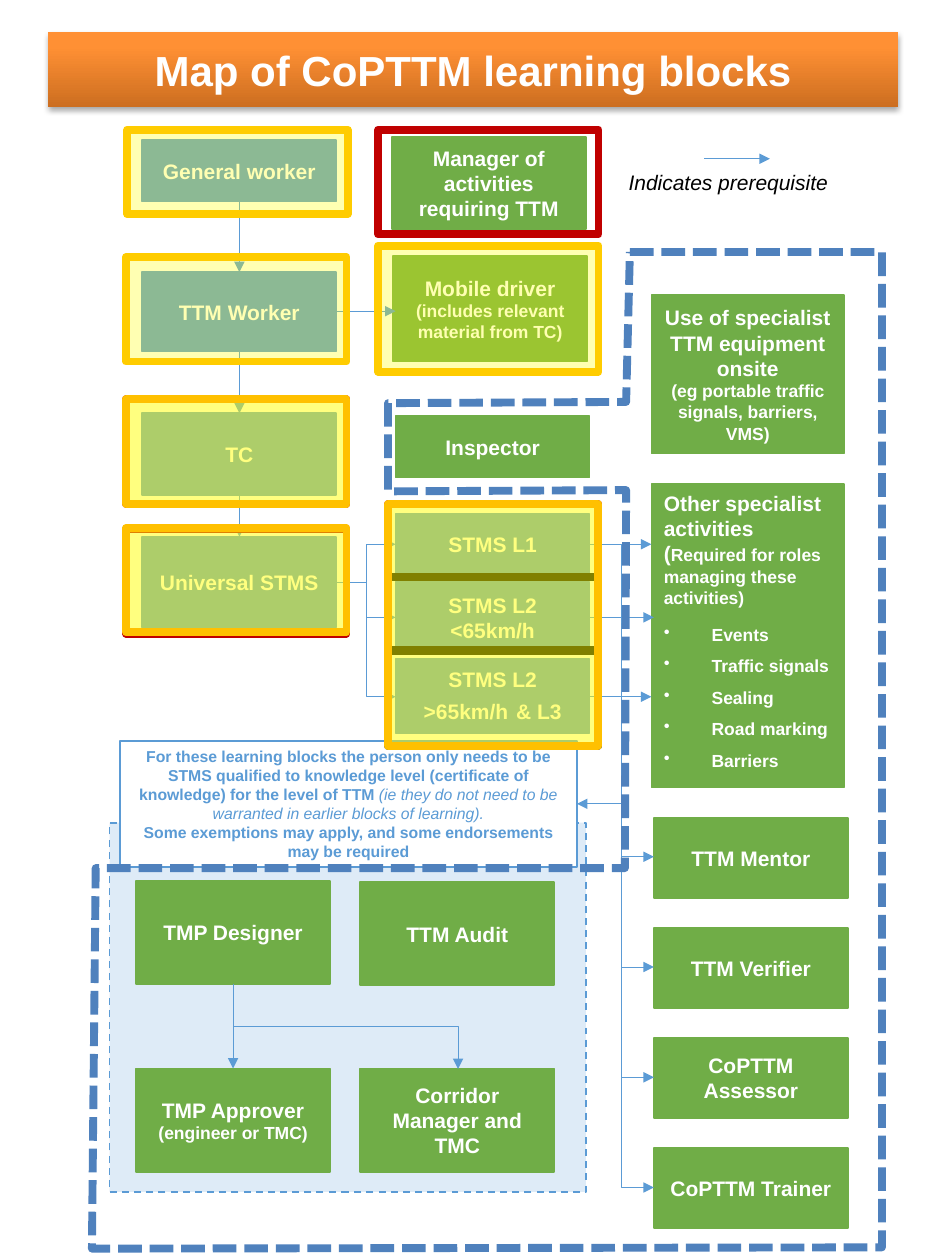
import pptx
import pptx.util
import pptx.oxml
import pptx.oxml.ns
import pptx.dml.color
import pptx.enum.dml
import pptx.enum.shapes
import pptx.enum.text
import lxml.etree

Inches, Pt = pptx.util.Inches, pptx.util.Pt
RGB = pptx.dml.color.RGBColor
KIND = pptx.enum.shapes.MSO_SHAPE
LINK = pptx.enum.shapes.MSO_CONNECTOR
DASH = pptx.enum.dml.MSO_LINE
ALIGN = pptx.enum.text.PP_ALIGN
ANCHOR = pptx.enum.text.MSO_ANCHOR
qn = pptx.oxml.ns.qn

BLUE, GREEN = RGB(0x5B, 0x9B, 0xD5), RGB(0x70, 0xAD, 0x47)
PALE, WHITE, BLACK = RGB(0xDE, 0xEB, 0xF7), RGB(255, 255, 255), RGB(0, 0, 0)
RED, YELLOW = RGB(0xC0, 0, 0), RGB(0xFF, 0xFF, 0)
GOLD, AMBER = RGB(0xFF, 0xCC, 0), RGB(0xFF, 0xC0, 0)
NAVY = RGB(0x4F, 0x81, 0xBD)

deck = pptx.Presentation()
deck.slide_width, deck.slide_height = Inches(7.5), Inches(10)
slide = deck.slides.add_slide(deck.slide_layouts[5])
shapes = slide.shapes


def add_box(at, fill, line, width=1):
    box = shapes.add_shape(KIND.RECTANGLE, *[Inches(v) for v in at])
    box.shadow.inherit = False
    if fill is None:
        box.fill.background()
    else:
        box.fill.solid()
        box.fill.fore_color.rgb = fill
    box.line.color.rgb = line
    box.line.width = Pt(width)
    return box


def set_text(para, text, size=12, color=WHITE, bold=True, align=ALIGN.CENTER, gap=6):
    """Write text in one font; lines are split at newlines."""
    para.alignment = align
    para.space_before = para.space_after = Pt(gap)
    font = para.font
    font.name, font.size, font.bold = "Arial", Pt(size), bold
    font.color.rgb = color
    for i, part in enumerate(text.split("\n")):
        if i:
            para.add_line_break()
        if part:
            para.add_run().text = part


# Panel behind the planning blocks
panel = add_box((0.87, 6.53, 3.78, 2.93), PALE, BLUE)
panel.line.dash_style = DASH.DASH

# Note on qualification level
note = add_box((0.95, 5.88, 3.63, 1), WHITE, BLUE)
note.text_frame.vertical_anchor = ANCHOR.MIDDLE
para = note.text_frame.paragraphs[0]
set_text(para, "For these learning blocks the person only needs to be STMS qualified "
         "to knowledge level (certificate of knowledge) for the level of TTM ", 9, BLUE, gap=3)
run = para.add_run()
run.text = "(ie they do not need to be warranted in earlier blocks of learning)."
run.font.bold, run.font.italic = False, True
para.add_line_break()
para.add_run().text = "Some exemptions may apply, and some endorsements may be required"

# Learning blocks: left, top, width, height, fill, heading, smaller text
W = 1.54
blocks = [
    (1.13, 1.11, W, 0.49, BLUE, "General worker", ""),
    (1.13, 2.16, W, 0.63, BLUE, "TTM Worker", ""),
    (1.13, 3.28, W, 0.65, BLUE, "TC", ""),
    (1.13, 4.26, W, 0.72, BLUE, "Universal STMS", ""),
    (3.14, 4.08, W, 0.47, BLUE, "STMS L1", ""),
    (3.14, 4.62, W, 0.56, BLUE, "STMS L2 <65km/h", ""),
    (3.11, 1.09, W, 0.73, GREEN, "Manager of activities requiring TTM", ""),
    (3.12, 2.03, W, 0.84, GREEN, "Mobile driver ", "(includes relevant material from TC)"),
    (3.14, 3.30, W, 0.49, GREEN, "Inspector", ""),
    (5.17, 2.34, 1.53, 1.26, GREEN, "Use of specialist TTM equipment onsite\n",
     "(eg portable traffic signals, barriers, VMS)"),
    (1.08, 6.99, W, 0.82, GREEN, "TMP Designer", ""),
    (2.86, 7.00, W, 0.82, GREEN, "TTM Audit", ""),
    (1.08, 8.48, W, 0.82, GREEN, "TMP Approver\n", "(engineer or TMC)"),
    (2.86, 8.48, W, 0.82, GREEN, "Corridor Manager and TMC", ""),
]
roles = ["TTM Mentor", "TTM Verifier", "CoPTTM Assessor", "CoPTTM Trainer"]
for i, role in enumerate(roles):
    blocks.append((5.19, 6.49 + 0.873 * i, W, 0.64, GREEN, role, ""))
for *at, fill, head, small in blocks:
    box = add_box(at, fill, fill)
    box.text_frame.vertical_anchor = ANCHOR.MIDDLE
    para = box.text_frame.paragraphs[0]
    set_text(para, head)
    if small:
        run = para.add_run()
        run.text, run.font.size = small, Pt(10)
    if head.startswith("Manager"):
        para.space_before = Pt(0)

# Highest STMS level, with a wide space before its last word
box = add_box((3.14, 5.23, W, 0.59), BLUE, BLUE)
box.text_frame.vertical_anchor = ANCHOR.MIDDLE
para = box.text_frame.paragraphs[0]
set_text(para, "STMS L2 >65km/h")
for text, size in ((" ", 16), ("& L3", 12)):
    run = para.add_run()
    run.text, run.font.size = text, Pt(size)

# Other specialist activities
box = add_box((5.17, 3.84, 1.53, 2.41), GREEN, GREEN)
frame = box.text_frame
frame.vertical_anchor = ANCHOR.TOP
para = frame.paragraphs[0]
set_text(para, "Other specialist activities (", align=ALIGN.LEFT)
run = para.add_run()
run.text, run.font.size = "Required for roles managing these activities)", Pt(10)
for item in ("Events", "Traffic signals", "Sealing", "Road marking", "Barriers"):
    para = frame.add_paragraph()
    set_text(para, item, 10, align=ALIGN.LEFT, gap=3)
    props = para._p.get_or_add_pPr()
    props.set("marL", str(Inches(0.38)))
    props.set("indent", str(-Inches(0.38)))
    mark = lxml.etree.Element(qn("a:buChar"), char="•")
    props.find(qn("a:defRPr")).addprevious(mark)

# Arrows: from, to, bend position (None is straight), rotation in degrees
arrows = [
    (1.9, 1.6, 1.9, 2.16, None, 0),
    (1.9, 2.79, 1.9, 3.28, None, 0),
    (1.9, 3.93, 1.9, 4.26, None, 0),
    (2.67, 2.47, 3.14, 2.47, None, 0),
    (5.59, 1.26, 6.11, 1.26, None, 0),
    (4.68, 4.32, 5.17, 4.32, None, 0),
    (4.68, 4.9, 5.19, 4.9, None, 0),
    (4.68, 5.53, 5.17, 5.53, None, 0),
    (1.85, 7.81, 1.85, 8.48, None, 0),
    (3.08, 7.26, 2.41, 9.04, 0.5, 270),
    (4.68, 4.32, 4.58, 6.38, -2.57, 0),
]
arrows += [(2.67, 4.62, 3.14, y, 0.5, 0) for y in (4.32, 4.9, 5.53)]
arrows += [(4.68, 5.53, 5.19, 6.8 + 0.875 * i, 0.5, 0) for i in range(len(roles))]
for *ends, bend, turn in arrows:
    kind = LINK.STRAIGHT if bend is None else LINK.ELBOW
    link = shapes.add_connector(kind, *[Inches(v) for v in ends])
    link.line.color.rgb = BLUE
    link.line.width = Pt(0.5)
    props = link._element.spPr
    lxml.etree.SubElement(props.find(qn("a:ln")), qn("a:tailEnd"), type="triangle")
    lxml.etree.SubElement(props, qn("a:effectLst"))
    if bend is not None:
        geom = props.find(qn("a:prstGeom"))
        for old in geom.findall(qn("a:avLst")):
            geom.remove(old)
        guides = lxml.etree.SubElement(geom, qn("a:avLst"))
        lxml.etree.SubElement(guides, qn("a:gd"), name="adj1",
                              fmla=f"val {round(bend * 100000)}")
    if turn:
        props.find(qn("a:xfrm")).set("rot", str(turn * 60000))

# Legend
label = shapes.add_textbox(Inches(4.89), Inches(1.3), Inches(1.98), Inches(0.49))
label.text_frame.word_wrap = True
para = label.text_frame.paragraphs[0]
set_text(para, "Indicates prerequisite", 12, BLACK, False, ALIGN.LEFT)
para.font.italic = True

# Frames around the blocks: place, line, opacity of the yellow fill
frames = [
    ((1, 3.17, 1.75, 0.83), RED, 0),
    ((1, 4.2, 1.75, 0.83), RED, 0),
    ((3.08, 4, 1.67, 0.58), RED, 0),
    ((3, 1.03, 1.75, 0.83), RED, 0),
    ((1.01, 1.03, 1.75, 0.67), GOLD, 30),
    ((1, 2.04, 1.75, 0.83), GOLD, 30),
    ((3, 1.95, 1.75, 1), GOLD, 30),
    ((1, 3.17, 1.75, 0.83), AMBER, 50),
    ((1, 4.19, 1.75, 0.83), AMBER, 50),
    ((3.08, 5.17, 1.67, 0.75), BLACK, 0),
    ((3.08, 4.58, 1.67, 0.58), BLACK, 0),
    ((3.08, 4, 1.67, 1.92), AMBER, 50),
]
for at, line, alpha in frames:
    box = add_box(at, YELLOW if alpha else None, line, 4.5)
    if alpha:
        tint = box._element.spPr.find(qn("a:solidFill")).find(qn("a:srgbClr"))
        lxml.etree.SubElement(tint, qn("a:alpha"), val=str(alpha * 1000))

# Dashed outline around the knowledge-level blocks
spots = [(5, 2), (7, 2), (7, 9.9), (0.73, 9.91), (0.76, 6.89), (4.96, 6.89),
         (4.97, 3.89), (3.08, 3.9), (3.08, 3.2), (4.97, 3.19)]
spots = [(Inches(x), Inches(y)) for x, y in spots]
pen = shapes.build_freeform(*spots[0])
pen.add_line_segments(spots[1:], close=True)
zone = pen.convert_to_shape()
zone.shadow.inherit = False
zone.fill.background()
zone.line.color.rgb = NAVY
zone.line.width = Pt(4.5)
zone.line.dash_style = DASH.SQUARE_DOT

# Title banner with gradient and shadow
title = shapes.title
title.left, title.top = Inches(0.38), Inches(0.25)
title.width, title.height = Inches(6.75), Inches(0.6)
title.text_frame.auto_size = pptx.enum.text.MSO_AUTO_SIZE.NONE
title.text_frame.vertical_anchor = ANCHOR.MIDDLE
set_text(title.text_frame.paragraphs[0], "Map of CoPTTM learning blocks", 24, gap=0)
stops = "".join(f'<a:gs pos="{pos}000"><a:srgbClr val="{tone}"/></a:gs>'
                for pos, tone in ((0, "CC6E20"), (80, "FF9034"), (100, "FF9136")))
look = pptx.oxml.parse_xml(
    f'<a:look {pptx.oxml.ns.nsdecls("a")}><a:prstGeom prst="roundRect"><a:avLst/></a:prstGeom>'
    f'<a:gradFill><a:gsLst>{stops}</a:gsLst><a:lin ang="16200000" scaled="0"/></a:gradFill>'
    '<a:effectLst><a:outerShdw blurRad="40000" dist="23000" dir="5400000" rotWithShape="0">'
    '<a:srgbClr val="000000"><a:alpha val="35000"/></a:srgbClr></a:outerShdw></a:effectLst></a:look>')
title._element.spPr.extend(list(look))

deck.save("out.pptx")
